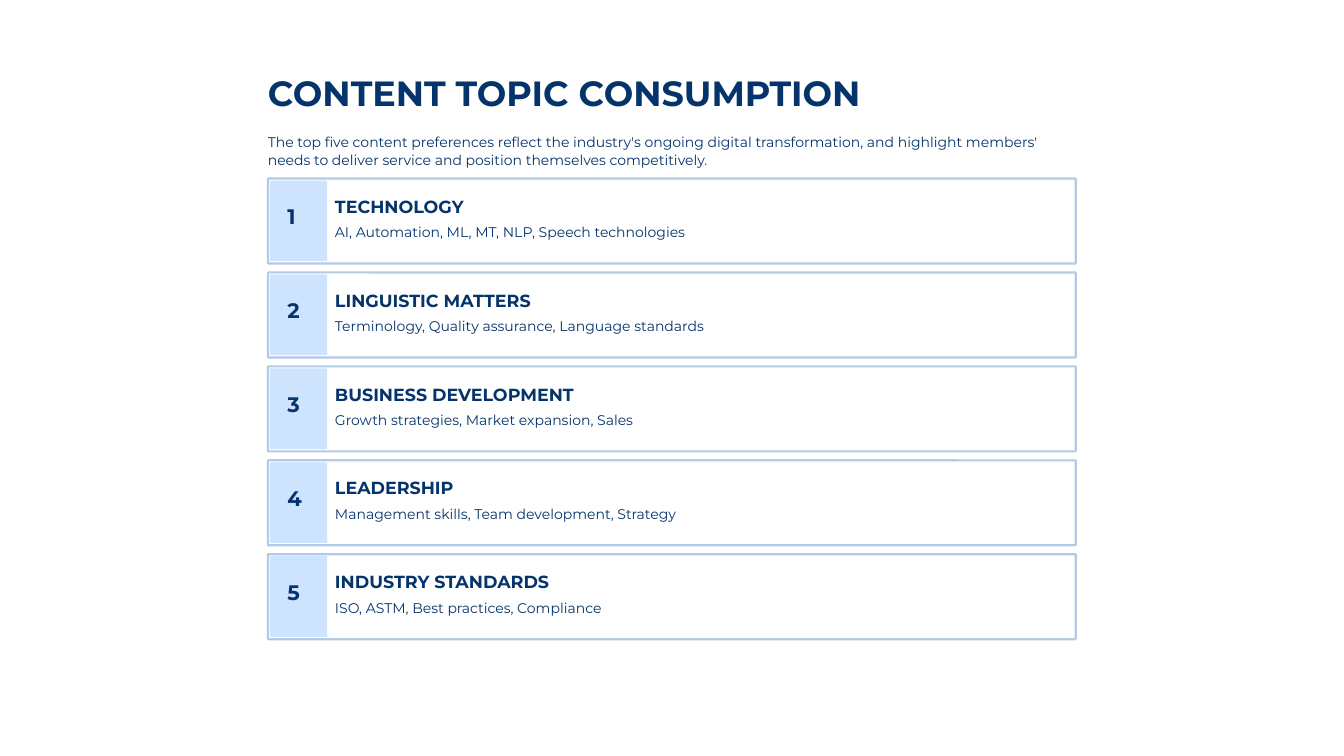
from pptx import Presentation
from pptx.dml.color import RGBColor
from pptx.enum.shapes import MSO_SHAPE as Shape
from pptx.enum.text import MSO_ANCHOR as Anchor, MSO_AUTO_SIZE as AutoSize, PP_ALIGN as Align
from pptx.util import Cm, Pt

COLORS = {"navy": "05346C", "border": "B4C9E3", "band": "CEE3FD", "white": "FFFFFF"}
FONT = "Montserrat"
TITLE = "CONTENT TOPIC CONSUMPTION"
INTRO = ("The top five content preferences reflect the industry's ongoing digital "
         "transformation, and highlight members' needs to deliver service and "
         "position themselves competitively.")
TOPICS = [
    ("TECHNOLOGY", "AI, Automation, ML, MT, NLP, Speech technologies"),
    ("LINGUISTIC MATTERS", "Terminology, Quality assurance, Language standards"),
    ("BUSINESS DEVELOPMENT", "Growth strategies, Market expansion, Sales"),
    ("LEADERSHIP", "Management skills, Team development, Strategy"),
    ("INDUSTRY STANDARDS", "ISO, ASTM, Best practices, Compliance"),
]

# Column shared by all parts, and the card rhythm, in cm
LEFT, WIDTH = 8.1, 24.43
CARDS_TOP, CARD_HEIGHT, CARD_STEP = 5.4, 2.57, 2.84


def color(name):
    return RGBColor.from_string(COLORS[name])


def write(box, text, *, size, line, bold=False):
    """Fill a text box or placeholder with one left-aligned paragraph."""
    frame = box.text_frame
    frame.word_wrap = True
    frame.auto_size = AutoSize.NONE
    frame.vertical_anchor = Anchor.TOP
    frame.margin_left = frame.margin_right = frame.margin_top = frame.margin_bottom = 0
    para = frame.paragraphs[0]
    para.alignment = Align.LEFT
    para.line_spacing = Pt(line)
    span = para.add_run()
    span.text = text
    span.font.name = FONT
    span.font.size = Pt(size)
    span.font.bold = bold
    span.font.color.rgb = color("navy")


def add_text(page, left, top, width, height, text, **style):
    box = page.shapes.add_textbox(Cm(left), Cm(top), Cm(width), Cm(height))
    write(box, text, **style)


def add_block(page, kind, left, top, width, height, fill, border=None):
    block = page.shapes.add_shape(kind, Cm(left), Cm(top), Cm(width), Cm(height))
    block.shadow.inherit = False
    block.fill.solid()
    block.fill.fore_color.rgb = color(fill)
    if border:
        block.line.color.rgb = color(border)
        block.line.width = Pt(1.8)
    else:
        block.line.fill.background()
    return block


def add_header(page, left, top, width):
    title = page.shapes.title
    title.left, title.top, title.width, title.height = Cm(left), Cm(top), Cm(width), Cm(1.35)
    write(title, TITLE, size=30, line=37.5, bold=True)
    add_text(page, left, top + 1.88, width, 1.12, INTRO, size=12, line=15.5)


def add_card(page, left, top, width, height, number, heading, details):
    # Frame and number band
    frame = add_block(page, Shape.ROUNDED_RECTANGLE, left, top, width, height, "white", "border")
    frame.adjustments[0] = 0.01
    add_block(page, Shape.RECTANGLE, left + 0.06, top + 0.06, 1.73, height - 0.13, "band")
    # Number, heading and details
    add_text(page, left + 0.59, top + 0.88, 0.64, 0.81, str(number), size=18, line=18, bold=True)
    text_left, text_width = left + 2.03, width - 2.54
    add_text(page, text_left, top + 0.5, text_width, 0.66, heading, size=15, line=18.5, bold=True)
    add_text(page, text_left, top + 1.32, text_width, 0.56, details, size=12, line=15.5)


def main():
    deck = Presentation()
    deck.slide_width, deck.slide_height = Cm(40.64), Cm(22.86)
    page = deck.slides.add_slide(deck.slide_layouts.get_by_name("Title Only"))
    page.background.fill.solid()
    page.background.fill.fore_color.rgb = color("white")

    add_header(page, LEFT, 2.11, WIDTH)
    for index, (heading, details) in enumerate(TOPICS):
        top = CARDS_TOP + index * CARD_STEP
        add_card(page, LEFT, top, WIDTH, CARD_HEIGHT, index + 1, heading, details)
    deck.save("out.pptx")


if __name__ == "__main__":
    main()
